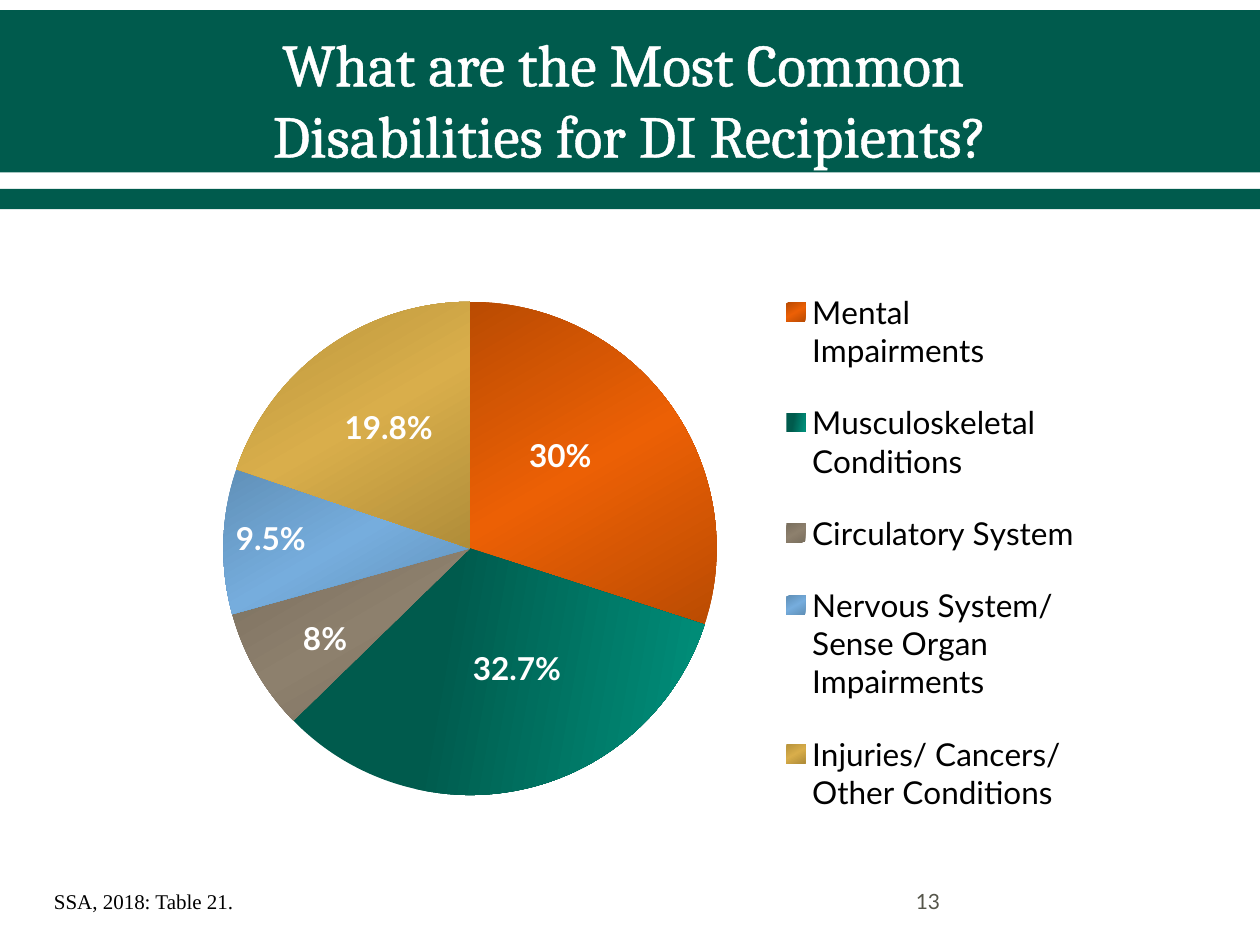
from lxml.etree import SubElement
from pptx import Presentation
from pptx.chart.data import CategoryChartData
from pptx.dml.color import RGBColor
from pptx.enum.chart import XL_CHART_TYPE, XL_LABEL_POSITION as LabelPos, XL_LEGEND_POSITION as LegendPos
from pptx.enum.shapes import MSO_SHAPE
from pptx.enum.text import MSO_ANCHOR, MSO_AUTO_SIZE, PP_ALIGN
from pptx.oxml import parse_xml
from pptx.oxml.ns import nsdecls, qn
from pptx.util import Inches, Pt

GREEN = RGBColor(0x00, 0x5B, 0x4D)
WHITE = RGBColor(0xFF, 0xFF, 0xFF)
BLACK = RGBColor(0x00, 0x00, 0x00)
GRAY = RGBColor(0x55, 0x55, 0x4A)

# category, value, label offset as a share of the chart, gradient angle, gradient stops in percent
SLICES = [
    ("Mental Impairments", 30, (-0.01, -0.03), 60,
     [(0, "BA4B02"), (50, "EC6005"), (100, "BA4B02")]),
    ("Musculoskeletal Conditions", 32.7, (0.02, 0), 10,
     [(0, "005B4D"), (36, "005B4D"), (100, "00927D")]),
    ("Circulatory System", 8, (-0.04, 0.04), 60,
     [(0, "7A6F5E"), (50, "8D806D"), (100, "7A6F5E")]),
    ("Nervous System/ Sense Organ Impairments", 9.5, (-0.08, -0.01), 60,
     [(0, "6090B8"), (50, "76ADDD"), (100, "6090B8")]),
    ("Injuries/ Cancers/ Other Conditions", 19.8, (-0.01, -0.03), 60,
     [(0, "B8943C"), (50, "D9AE4B"), (100, "B08D39")]),
]


def manual_layout(**values):
    """Return a c:layout element that holds the given values."""
    layout = parse_xml(f"<c:layout {nsdecls('c')}><c:manualLayout/></c:layout>")
    for name, value in values.items():
        SubElement(layout[0], qn(f"c:{name}")).set("val", str(value))
    return layout


def set_font(font, **values):
    color = values.pop("color")
    for name, value in values.items():
        setattr(font, name, value)
    font.color.rgb = color


prs = Presentation()
prs.slide_width, prs.slide_height = Inches(10), Inches(7.5)
s = prs.slides.add_slide(prs.slide_layouts[5])

# Header bands
for top, height in [(0.08, 1.26), (1.5, 0.16), (0.11, 1.26)]:
    band = s.shapes.add_shape(MSO_SHAPE.RECTANGLE, 0, Inches(top), Inches(10), Inches(height))
    band.shadow.inherit = False
    band.fill.solid()
    band.fill.fore_color.rgb = GREEN
    band.line.fill.background()

# Title, in front of the bands
title = s.shapes.title
s.shapes._spTree.append(title._element)
title.left, title.top, title.width, title.height = Inches(0.5), Inches(0.17), Inches(9), Inches(1.22)
tf = title.text_frame
tf.auto_size = MSO_AUTO_SIZE.NONE
tf.vertical_anchor = MSO_ANCHOR.MIDDLE
p = tf.paragraphs[0]
p.alignment = PP_ALIGN.CENTER
for i, line in enumerate(["What are the Most Common ", "Disabilities for DI Recipients?"]):
    if i:
        p.add_line_break()
    r = p.add_run()
    r.text = line
    set_font(r.font, name="Cambria", size=Pt(34), color=WHITE)
    r.font._element.insert(0, parse_xml(
        f'<a:ln {nsdecls("a")} w="13970"><a:solidFill><a:srgbClr val="{WHITE}"/></a:solidFill></a:ln>'))

# Source note and page number
for text, box, font, color, wrap, anchor in [
    ("SSA, 2018: Table 21.", (0.33, 7, 1.64, 0.3), "Times New Roman", BLACK, False, MSO_ANCHOR.TOP),
    ("13", (7.17, 6.95, 2.33, 0.4), "Lato", GRAY, True, MSO_ANCHOR.MIDDLE),
]:
    tf = s.shapes.add_textbox(*map(Inches, box)).text_frame
    tf.word_wrap = wrap
    tf.vertical_anchor = anchor
    r = tf.paragraphs[0].add_run()
    r.text = text
    set_font(r.font, name=font, size=Pt(12), color=color)

# Pie chart
data = CategoryChartData(number_format="General")
data.categories = [row[0] for row in SLICES]
data.add_series("Series 1", [row[1] for row in SLICES])
chart = s.shapes.add_chart(XL_CHART_TYPE.PIE, Inches(1.17), Inches(1.5),
                           Inches(7.53), Inches(5.54), data).chart
chart.has_title = False
set_font(chart.font, name="Lato", size=Pt(18), color=BLACK)

plot_area = chart._chartSpace.find(".//" + qn("c:plotArea"))
for old in plot_area.findall(qn("c:layout")):
    plot_area.remove(old)
plot_area.insert(0, manual_layout(layoutTarget="inner", xMode="edge", yMode="edge",
                                  x=0.08, y=0.15, w=0.52, h=0.73))

chart.has_legend = True
legend = chart.legend
legend.position = LegendPos.RIGHT
legend.include_in_layout = False
set_font(legend.font, name="Lato", size=Pt(18), color=BLACK)
for old in legend._element.findall(qn("c:layout")):
    legend._element.remove(old)
legend._element.find(qn("c:legendPos")).addnext(
    manual_layout(xMode="edge", yMode="edge", x=0.67, y=0.1, w=0.31, h=0.84))

plot = chart.plots[0]
plot.vary_by_categories = True
series = plot.series[0]
for i, (_, _, (dx, dy), angle, stops) in enumerate(SLICES):
    point = series.points[i]
    point.format.line.fill.background()
    sp_pr = series._element.xpath("c:dPt/c:spPr")[i]
    gs = "".join(f'<a:gs pos="{pos * 1000}"><a:srgbClr val="{color}"/></a:gs>' for pos, color in stops)
    sp_pr.insert(0, parse_xml(f'<a:gradFill {nsdecls("a")} rotWithShape="1"><a:gsLst>{gs}</a:gsLst>'
                              f'<a:lin ang="{angle * 60000}" scaled="0"/></a:gradFill>'))

    label = point.data_label
    set_font(label.font, name="Lato", size=Pt(18), bold=True, color=WHITE)
    label.position = LabelPos.CENTER
    d_lbl = series._element.xpath("c:dLbls/c:dLbl")[i]
    d_lbl.insert(1, manual_layout(x=dx, y=dy))
    d_lbl.insert(2, parse_xml(
        f'<c:numFmt {nsdecls("c")} formatCode="General\\%" sourceLinked="0"/>'))

labels = series.data_labels
labels.show_value = True
labels.number_format = "General\\%"
labels.number_format_is_linked = False
labels.position = LabelPos.CENTER
set_font(labels.font, name="Lato", size=Pt(18), bold=True, color=WHITE)

prs.save("out.pptx")
